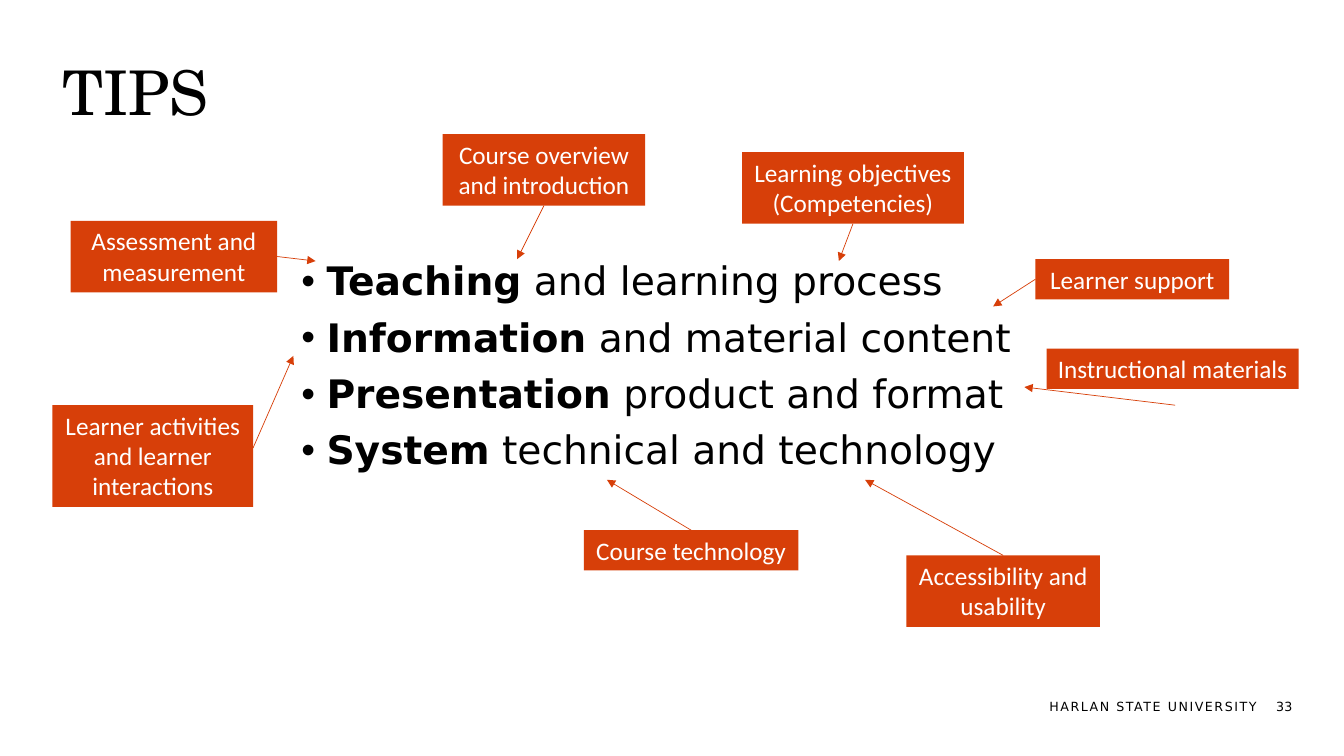
from lxml.etree import SubElement
from pptx import Presentation
from pptx.dml.color import RGBColor
from pptx.enum.shapes import MSO_CONNECTOR, MSO_SHAPE
from pptx.enum.text import MSO_ANCHOR, PP_ALIGN
from pptx.oxml.ns import qn
from pptx.util import Inches, Pt

COLORS = {"text": "000000", "label": "D73F09", "light": "FFFFFF"}
SANS = "DejaVu Sans"
TOP, BOTTOM, LEFT, RIGHT = (0.5, 0), (0.5, 1), (0, 0.5), (1, 0.5)

# text, box, start of arrow as a share of the box, end of arrow, wrap
LABELS = [
    ("Course overview and introduction", (4.39, 1.33, 2.01, 0.71), BOTTOM, (5.13, 2.57), True),
    ("Learning objectives (Competencies)", (7.36, 1.51, 2.2, 0.71), BOTTOM, (8.32, 2.59), True),
    ("Assessment and measurement", (0.7, 2.19, 2.05, 0.71), RIGHT, (3.13, 2.59), True),
    ("Instructional materials", (10.38, 3.46, 2.5, 0.4), (0.51, 1.4), (10.16, 3.84), False),
    ("Learner activities and learner interactions", (0.52, 4.02, 1.99, 1.01),
     (1, 0.42), (2.91, 3.53), True),
    ("Course technology", (5.79, 5.26, 2.13, 0.4), TOP, (6.02, 4.76), False),
    ("Learner support", (10.27, 2.57, 1.92, 0.4), LEFT, (9.85, 3.04), True),
    ("Accessibility and usability", (8.99, 5.51, 1.92, 0.71), TOP, (8.58, 4.76), True),
]
POINTS = [
    ("Teaching", " and learning process"),
    ("Information", " and material content"),
    ("Presentation", " product and format"),
    ("System", " technical and technology"),
]


def color(name):
    return RGBColor.from_string(COLORS[name])


def style(run, size, face=SANS, name="text", bold=False):
    font = run.font
    font.size, font.name, font.bold = Pt(size), face, bold
    font.color.rgb = color(name)


def add_text(slide, box, text, size, face=SANS, align=PP_ALIGN.LEFT):
    """Add one line of text, centred vertically, and return its paragraph."""
    frame = slide.shapes.add_textbox(*map(Inches, box)).text_frame
    frame.word_wrap = True
    frame.vertical_anchor = MSO_ANCHOR.MIDDLE
    para = frame.paragraphs[0]
    para.text, para.alignment = text, align
    style(para.runs[0], size, face)
    return para


def add_title(slide, box):
    add_text(slide, box, "TIPS", 44, "TeX Gyre Schola").line_spacing = 0.9


def add_footer(slide, box):
    left, top, width, height = box
    num = 0.5
    name = add_text(slide, (left, top, width - num, height),
                    "HARLAN STATE UNIVERSITY", 9, align=PP_ALIGN.RIGHT)
    name.runs[0].font._element.set("spc", "110")
    add_text(slide, (left + width - num, top, num, height), "33", 9)


def add_points(slide, box):
    frame = slide.shapes.add_textbox(*map(Inches, box)).text_frame
    frame.word_wrap = True
    for i, parts in enumerate(POINTS):
        para = frame.add_paragraph() if i else frame.paragraphs[0]
        para.line_spacing, para.space_before = 0.9, Pt(10)
        for part in parts:
            run = para.add_run()
            run.text = part
            style(run, 28, bold=part == parts[0])
        props = para._p.get_or_add_pPr()
        props.set("marL", str(Inches(0.25)))
        props.set("indent", str(-Inches(0.25)))
        SubElement(props, qn("a:buFont"), typeface="Arial")
        SubElement(props, qn("a:buChar"), char="•")


def add_label(slide, box, text, wrap):
    shape = slide.shapes.add_shape(MSO_SHAPE.RECTANGLE, *map(Inches, box))
    shape.shadow.inherit = False
    shape.fill.solid()
    shape.fill.fore_color.rgb = color("label")
    shape.line.fill.background()
    frame = shape.text_frame
    frame.word_wrap = wrap
    frame.vertical_anchor = MSO_ANCHOR.TOP
    para = frame.paragraphs[0]
    para.text, para.alignment = text, PP_ALIGN.CENTER
    style(para.runs[0], 18, "Calibri", "light")


def add_arrow(slide, box, share, end):
    """Draw an arrow from a point given as a share of the box."""
    left, top, width, height = box
    start = left + share[0] * width, top + share[1] * height
    arrow = slide.shapes.add_connector(MSO_CONNECTOR.STRAIGHT, *map(Inches, start + end))
    arrow.line.color.rgb = color("label")
    arrow.line.width = Pt(0.5)
    SubElement(arrow.line._get_or_add_ln(), qn("a:tailEnd"), type="triangle")
    SubElement(arrow._element.spPr, qn("a:effectLst"))


def main():
    deck = Presentation()
    deck.slide_width, deck.slide_height = Inches(13.33), Inches(7.5)
    slide = deck.slides.add_slide(deck.slide_layouts[6])
    add_footer(slide, (9.57, 6.81, 3.49, 0.4))
    add_title(slide, (0.52, 0.22, 11.5, 1.45))
    add_points(slide, (2.89, 2.55, 9.55, 2.21))
    for text, box, share, end, wrap in LABELS:
        add_label(slide, box, text, wrap)
        add_arrow(slide, box, share, end)
    deck.save("out.pptx")


if __name__ == "__main__":
    main()
